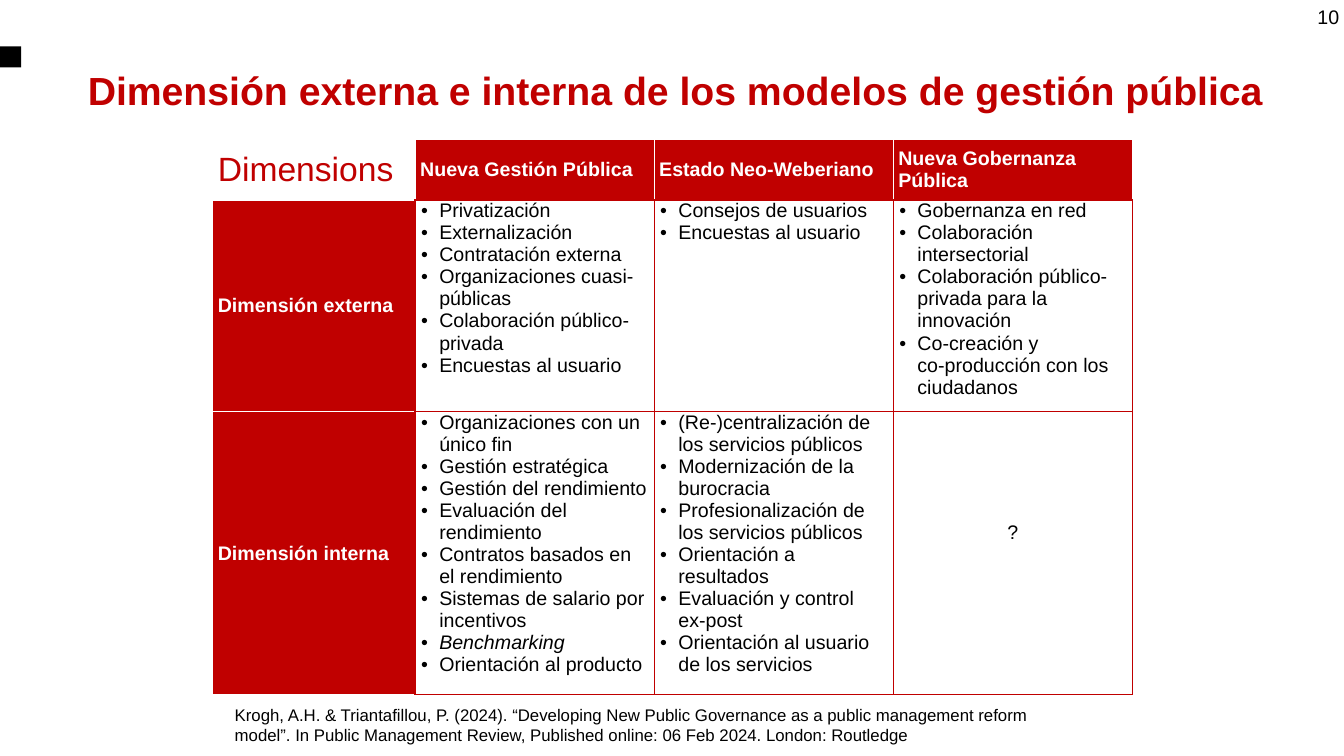
import dataclasses

import lxml.etree
import pptx
import pptx.dml.color
import pptx.enum.shapes
import pptx.enum.text
import pptx.oxml.ns
import pptx.util

Inches, Pt = pptx.util.Inches, pptx.util.Pt
ALIGN, ANCHOR = pptx.enum.text.PP_ALIGN, pptx.enum.text.MSO_ANCHOR
WIDTH, HEIGHT = Inches(13.33), Inches(7.5)


@dataclasses.dataclass(frozen=True)
class Theme:
    """Colours, type sizes and font of the slide."""
    red: str = "C00000"
    white: str = "FFFFFF"
    black: str = "000000"
    title: int = 28
    corner: int = 24
    body: int = 14
    citation: int = 12
    font: str = "Arial"


THEME = Theme()
MODELS = ["Nueva Gestión Pública", "Estado Neo-Weberiano", "Nueva Gobernanza Pública"]
DIMENSIONS = {
    "Dimensión externa": [
        ["Privatización", "Externalización", "Contratación externa",
         "Organizaciones cuasi-públicas", "Colaboración público-privada",
         "Encuestas al usuario"],
        ["Consejos de usuarios", "Encuestas al usuario"],
        ["Gobernanza en red", "Colaboración intersectorial",
         "Colaboración público-privada para la innovación",
         "Co-creación y \nco-producción con los ciudadanos"],
    ],
    "Dimensión interna": [
        ["Organizaciones con un único fin", "Gestión estratégica",
         "Gestión del rendimiento", "Evaluación del rendimiento",
         "Contratos basados en el rendimiento",
         "Sistemas de salario por incentivos", "Benchmarking",
         "Orientación al producto"],
        ["(Re-)centralización de los servicios públicos",
         "Modernización de la burocracia",
         "Profesionalización de los servicios públicos",
         "Orientación a resultados", "Evaluación y control \nex-post",
         "Orientación al usuario de los servicios"],
        ["?"],
    ],
}
CITATION = ("Krogh, A.H. & Triantafillou, P. (2024). “Developing New Public Governance "
            "as a public management reform model”. In Public Management Review, "
            "Published online: 06 Feb 2024. London: Routledge")


def grid_box(left, top, width, height):
    """Turn cells of a 100 by 100 slide grid into a box."""
    return (int(WIDTH * left / 100), int(HEIGHT * top / 100),
            int(WIDTH * width / 100), int(HEIGHT * height / 100))


def rgb(colour):
    """Return a colour object for a hex string."""
    return pptx.dml.color.RGBColor.from_string(colour)


def style(paragraph, size, colour, bold=False, align=ALIGN.LEFT):
    """Format a paragraph and all its runs."""
    paragraph.alignment = align
    for run in paragraph.runs:
        run.font.name = THEME.font
        run.font.size = Pt(size)
        run.font.bold = bold
        run.font.color.rgb = rgb(colour)


def add_bullet(paragraph):
    """Give a paragraph a hanging black bullet."""
    properties = paragraph._p.get_or_add_pPr()
    properties.set("marL", str(Inches(0.19)))
    properties.set("indent", str(-Inches(0.18)))
    qn = pptx.oxml.ns.qn
    bullet_colour = lxml.etree.SubElement(properties, qn("a:buClr"))
    lxml.etree.SubElement(bullet_colour, qn("a:srgbClr"), val=THEME.black)
    lxml.etree.SubElement(properties, qn("a:buFont"), typeface=THEME.font)
    lxml.etree.SubElement(properties, qn("a:buChar"), char="•")


def set_borders(cell, left, right, top, bottom):
    """Draw the four one-point borders of a cell."""
    qn = pptx.oxml.ns.qn
    properties = cell._tc.get_or_add_tcPr()
    sides = zip(("a:lnL", "a:lnR", "a:lnT", "a:lnB"), (left, right, top, bottom))
    for place, (side, colour) in enumerate(sides):
        line = lxml.etree.Element(qn(side), w=str(Pt(1)))
        fill = lxml.etree.SubElement(line, qn("a:solidFill"))
        lxml.etree.SubElement(fill, qn("a:srgbClr"), val=colour)
        properties.insert(place, line)


def prepare_cell(cell, fill, borders, anchor=ANCHOR.MIDDLE):
    """Set the fill, borders, insets and anchor of a cell."""
    cell.fill.solid()
    cell.fill.fore_color.rgb = rgb(fill)
    cell.margin_left = cell.margin_right = Inches(0.05)
    cell.margin_top = cell.margin_bottom = 0
    cell.vertical_anchor = anchor
    set_borders(cell, *borders)


def fill_heading(cell, label, borders, fill=THEME.red, colour=THEME.white,
                 size=THEME.body, bold=True):
    """Write a row or column heading."""
    prepare_cell(cell, fill, borders)
    cell.text_frame.text = label
    style(cell.text_frame.paragraphs[0], size, colour, bold)


def fill_list(cell, items):
    """Write a bulleted list, or a centred mark for an open question."""
    is_open = items == ["?"]
    prepare_cell(cell, THEME.white, [THEME.red] * 4,
                 ANCHOR.MIDDLE if is_open else ANCHOR.TOP)
    if is_open:
        cell.margin_bottom = Inches(0.4)
    frame = cell.text_frame
    for index, item in enumerate(items):
        paragraph = frame.add_paragraph() if index else frame.paragraphs[0]
        paragraph.text = item
        if not is_open:
            add_bullet(paragraph)
        style(paragraph, THEME.body, THEME.black,
              align=ALIGN.CENTER if is_open else ALIGN.LEFT)
        if item == "Benchmarking":
            paragraph.runs[0].font.italic = True


def add_models_table(slide, box):
    """Place the table of models by dimension in its box."""
    table = slide.shapes.add_table(len(DIMENSIONS) + 1, len(MODELS) + 1, *box).table
    for column, share in zip(table.columns, (0.22, 0.26, 0.26, 0.26)):
        column.width = int(box[2] * share)
    for row, share in zip(table.rows, (0.11, 0.38, 0.51)):
        row.height = int(box[3] * share)
    white, red = THEME.white, THEME.red
    fill_heading(table.cell(0, 0), "Dimensions", [white] * 4, white, red,
                 THEME.corner, False)
    for column, model in enumerate(MODELS, 1):
        fill_heading(table.cell(0, column), model, (white, white, white, red))
    for row, (dimension, lists) in enumerate(DIMENSIONS.items(), 1):
        fill_heading(table.cell(row, 0), dimension, (white, red, white, white))
        for column, items in enumerate(lists, 1):
            fill_list(table.cell(row, column), items)


def add_marker(slide, box):
    """Place the black square at the slide edge."""
    marker = slide.shapes.add_shape(pptx.enum.shapes.MSO_SHAPE.RECTANGLE, *box)
    marker.shadow.inherit = False
    marker.fill.solid()
    marker.fill.fore_color.rgb = rgb(THEME.black)
    marker.line.fill.background()


def add_title(slide, box):
    """Write the title in its placeholder."""
    title = slide.shapes.title
    title.left, title.top, title.width, title.height = box
    title.text_frame.text = "Dimensión externa e interna de los modelos de gestión pública"
    title.text_frame.vertical_anchor = ANCHOR.MIDDLE
    style(title.text_frame.paragraphs[0], THEME.title, THEME.red, True)


def add_note(slide, box, wording, size, align=ALIGN.LEFT):
    """Place a wrapped line of plain text in its box."""
    frame = slide.shapes.add_textbox(*box).text_frame
    frame.word_wrap = True
    frame.text = wording
    style(frame.paragraphs[0], size, THEME.black, align=align)


def main():
    """Build and save the slide."""
    deck = pptx.Presentation()
    deck.slide_width, deck.slide_height = WIDTH, HEIGHT
    slide = deck.slides.add_slide(deck.slide_layouts[5])
    add_marker(slide, grid_box(0, 6.13, 1.58, 2.8))
    add_title(slide, grid_box(5.78, 7.47, 91.6, 8.8))
    add_note(slide, grid_box(96.1, 0, 4.28, 5.33), "10", THEME.body, ALIGN.RIGHT)
    add_note(slide, grid_box(16.73, 92.53, 63.92, 6.67), CITATION, THEME.citation)
    add_models_table(slide, grid_box(15.83, 18.4, 68.42, 73.33))
    deck.save("out.pptx")


if __name__ == "__main__":
    main()
